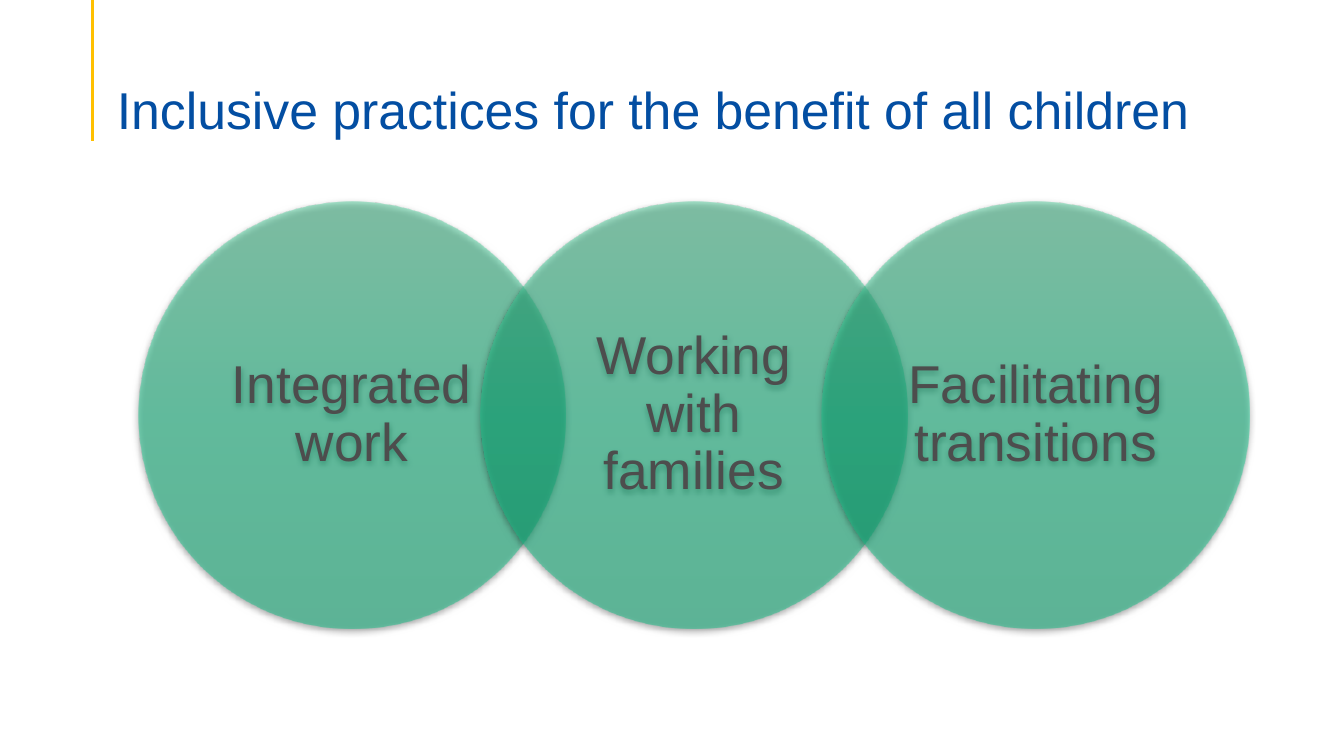
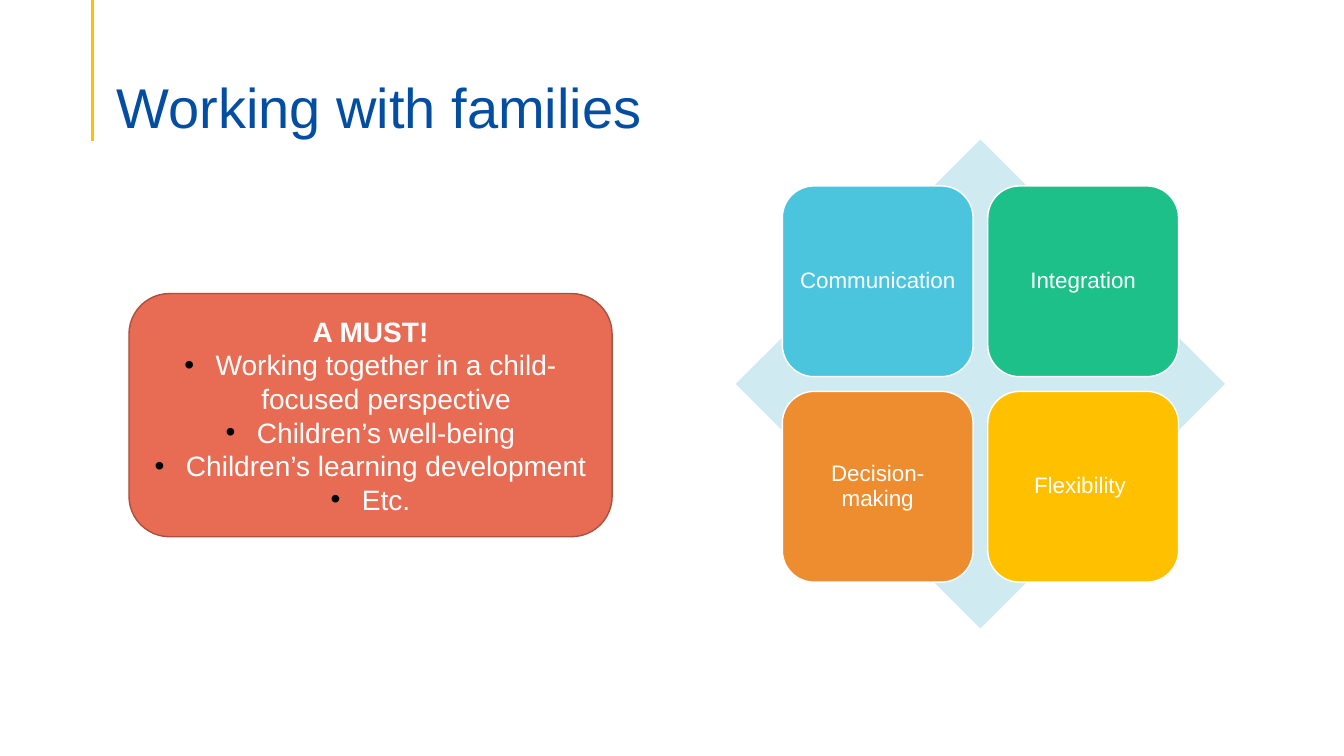
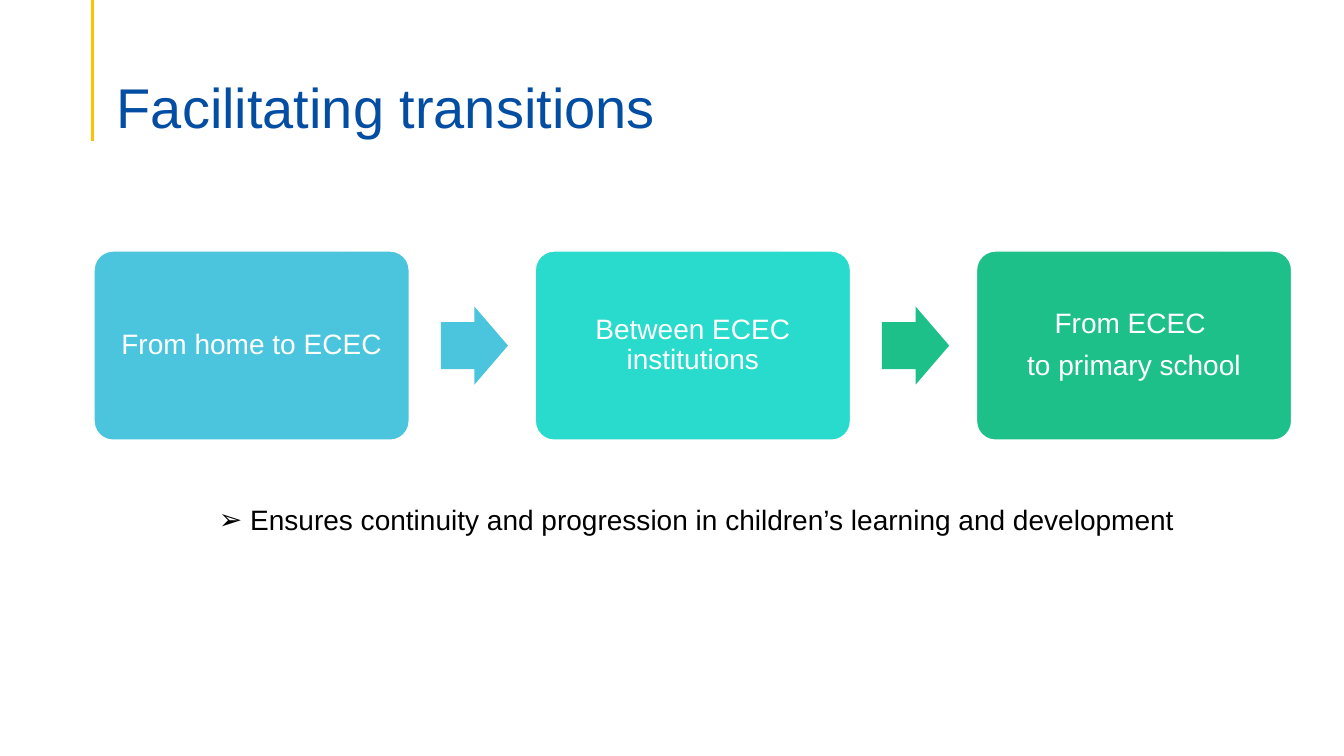
from pptx import Presentation
from pptx.dml.color import RGBColor
from pptx.enum.shapes import MSO_CONNECTOR, MSO_SHAPE
from pptx.enum.text import MSO_ANCHOR, PP_ALIGN
from pptx.oxml import parse_xml
from pptx.oxml.ns import nsdecls
from pptx.util import Inches, Pt

COLORS = {
    "title": "034EA2", "rule": "FFC000", "white": "FFFFFF", "black": "000000",
    "gray": "4D4D4D", "sky": "4BC5DE", "pale": "D0EAF2", "teal": "29DBCC",
    "green": "1EC08A", "orange": "ED8D2F", "yellow": "FFC000",
    "coral": "E76C53", "rust": "AB503D",
    "mint_top": "4ECA98", "mint_mid": "16C88D", "mint_end": "0CB97F",
}
FONT = "Arial"
COLS = 100  # square grid cells, 100 across the slide


def rgb(name):
    return RGBColor.from_string(COLORS[name])


class Deck:
    """Holds the style and the current slide; lengths are grid cells."""

    def __init__(self):
        self.prs = Presentation()
        self.prs.slide_width = Inches(13.33)
        self.prs.slide_height = Inches(7.5)
        self.cell = self.prs.slide_width / COLS
        self.s = None

    def grid(self, *cells):
        return [round(c * self.cell) for c in cells]

    def slide(self, title, size=40):
        """New slide with the yellow rule and its title."""
        self.s = self.prs.slides.add_slide(self.prs.slide_layouts[6])
        rule = self.s.shapes.add_connector(
            MSO_CONNECTOR.STRAIGHT, *self.grid(6.9, 0, 6.9, 10.5))
        rule.line.color.rgb = rgb("rule")
        rule.line.width = Pt(2.25)
        rule._element.spPr.append(parse_xml(f"<a:effectLst {nsdecls('a')}/>"))
        sp = self.textbox(7.95, 4, 86.25, 6.45)
        tf = sp.text_frame
        tf.vertical_anchor = MSO_ANCHOR.BOTTOM
        tf.margin_bottom = 0
        self.put_text(sp, [title], size, "title", align=PP_ALIGN.LEFT)

    def textbox(self, x, y, w, h):
        sp = self.s.shapes.add_textbox(*self.grid(x, y, w, h))
        sp.text_frame.word_wrap = True
        return sp

    def shape(self, kind, x, y, w, h, fill=None, line=None, adj=()):
        sp = self.s.shapes.add_shape(kind, *self.grid(x, y, w, h))
        sp.shadow.inherit = False
        for i, value in enumerate(adj):
            sp.adjustments[i] = value
        if fill:
            sp.fill.solid()
            sp.fill.fore_color.rgb = rgb(fill)
        if line:
            sp.line.color.rgb = rgb(line)
            sp.line.width = Pt(1)
        else:
            sp.line.fill.background()
        return sp

    def put_text(self, sp, lines, size, color, align=PP_ALIGN.CENTER,
                 spacing=0.9, after=0, inset=None):
        """Fill a shape with one paragraph per line."""
        tf = sp.text_frame
        tf.word_wrap = True
        if inset:
            tf.margin_left = tf.margin_right = Inches(inset[0])
            tf.margin_top = tf.margin_bottom = Inches(inset[1])
        tf.text = "\n".join(lines)
        for i, p in enumerate(tf.paragraphs, 1):
            p.alignment = align
            p.line_spacing = spacing
            if i < len(lines):
                p.space_after = Pt(after)
            for r in p.runs:
                r.font.name = FONT
                r.font.size = Pt(size)
                r.font.color.rgb = rgb(color)
        return tf

    def bullet(self, p, char):
        pPr = p._p.get_or_add_pPr()
        pPr.set("marL", str(Inches(0.31)))
        pPr.set("indent", str(-Inches(0.31)))
        ns = nsdecls("a")
        for xml in (
            f'<a:buClr {ns}><a:srgbClr val="{COLORS["black"]}"/></a:buClr>',
            f'<a:buFont {ns} typeface="{FONT}"/>',
            f'<a:buChar {ns} char="{char}"/>',
        ):
            pPr.append(parse_xml(xml))

    def circle(self, x, y, d, text):
        """Translucent gradient circle with a soft shadow."""
        sp = self.shape(MSO_SHAPE.OVAL, x, y, d, d)
        stops = "".join(
            f'<a:gs pos="{pos * 1000}"><a:srgbClr val="{COLORS[name]}">'
            '<a:alpha val="50000"/></a:srgbClr></a:gs>'
            for pos, name in ((0, "mint_top"), (50, "mint_mid"), (100, "mint_end")))
        spPr = sp._element.spPr
        spPr.prstGeom.addnext(parse_xml(
            f'<a:gradFill {nsdecls("a")} rotWithShape="1"><a:gsLst>{stops}</a:gsLst>'
            '<a:lin ang="5400000" scaled="0"/></a:gradFill>'))
        spPr.find("{*}effectLst").append(parse_xml(
            f'<a:outerShdw {nsdecls("a")} blurRad="{Pt(4.5)}" dist="{Pt(1.5)}" '
            f'dir="5400000" rotWithShape="0"><a:srgbClr val="{COLORS["black"]}">'
            '<a:alpha val="63000"/></a:srgbClr></a:outerShdw>'))
        self.put_text(sp, [text], 38, "gray", inset=(0.23, 0.05))

    def card(self, x, y, w, h, lines, fill, size, inset, adj=()):
        sp = self.shape(MSO_SHAPE.ROUNDED_RECTANGLE, x, y, w, h, fill, "white", adj)
        self.put_text(sp, lines, size, "white", after=8, inset=(inset, inset))


def practices(deck):
    deck.slide("Inclusive practices for the benefit of all children", 37)
    d = 31.8
    for i, text in enumerate(("Integrated work", "Working with families",
                              "Facilitating transitions")):
        deck.circle(10.28 + i * 0.8 * d, 15, d, text)


def families(deck):
    deck.slide("Working with families")
    # Four tiles over a diamond
    x, y, d = 54.75, 10.38, 36.4
    deck.shape(MSO_SHAPE.DIAMOND, x, y, d, d, "pale")
    tile, pitch, margin = 0.39 * d, 0.42 * d, 0.095 * d
    tiles = (("Communication", "sky"), ("Integration", "green"),
             ("Decision-making", "orange"), ("Flexibility ", "yellow"))
    for i, (text, fill) in enumerate(tiles):
        row, col = divmod(i, 2)
        deck.card(x + margin + col * pitch, y + margin + row * pitch,
                  tile, tile, [text], fill, 16, 0.07)
    # Callout with a bold heading
    callout = deck.shape(MSO_SHAPE.ROUNDED_RECTANGLE, 9.6, 21.85, 35.95, 18.1,
                         "coral", "rust")
    tf = deck.put_text(callout, [
        "A MUST!",
        "Working together in a child-focused perspective",
        "Children’s well-being",
        "Children’s learning development",
        "Etc.",
    ], 20, "white", spacing=1.0)
    heading, *points = tf.paragraphs
    heading.runs[0].font.bold = True
    for p in points:
        deck.bullet(p, "•")


def transitions(deck):
    deck.slide("Facilitating transitions")
    # Steps joined by block arrows
    x, y, w, h = 7, 18.68, 23.45, 14.08
    arrow_w, arrow_h = 5, 5.82
    steps = ((["From home to ECEC"], "sky", "sky"),
             (["Between ECEC institutions"], "teal", "green"),
             (["From ECEC ", "to primary school"], "green", None))
    for i, (lines, fill, arrow) in enumerate(steps):
        left = x + i * 1.4 * w
        deck.card(left, y, w, h, lines, fill, 20, 0.08, adj=[0.1])
        if arrow:
            deck.shape(MSO_SHAPE.RIGHT_ARROW, left + 1.1 * w, y + (h - arrow_h) / 2,
                       arrow_w, arrow_h, arrow, adj=[0.6, 0.5])
    # Conclusion
    sp = deck.textbox(15.55, 37.05, 74.5, 3.3)
    tf = deck.put_text(
        sp, ["Ensures continuity and progression in children’s learning and development"],
        20, "black", align=PP_ALIGN.LEFT, spacing=1.0)
    deck.bullet(tf.paragraphs[0], "➢")


def main():
    deck = Deck()
    for build in (practices, families, transitions):
        build(deck)
    deck.prs.save("out.pptx")


if __name__ == "__main__":
    main()
